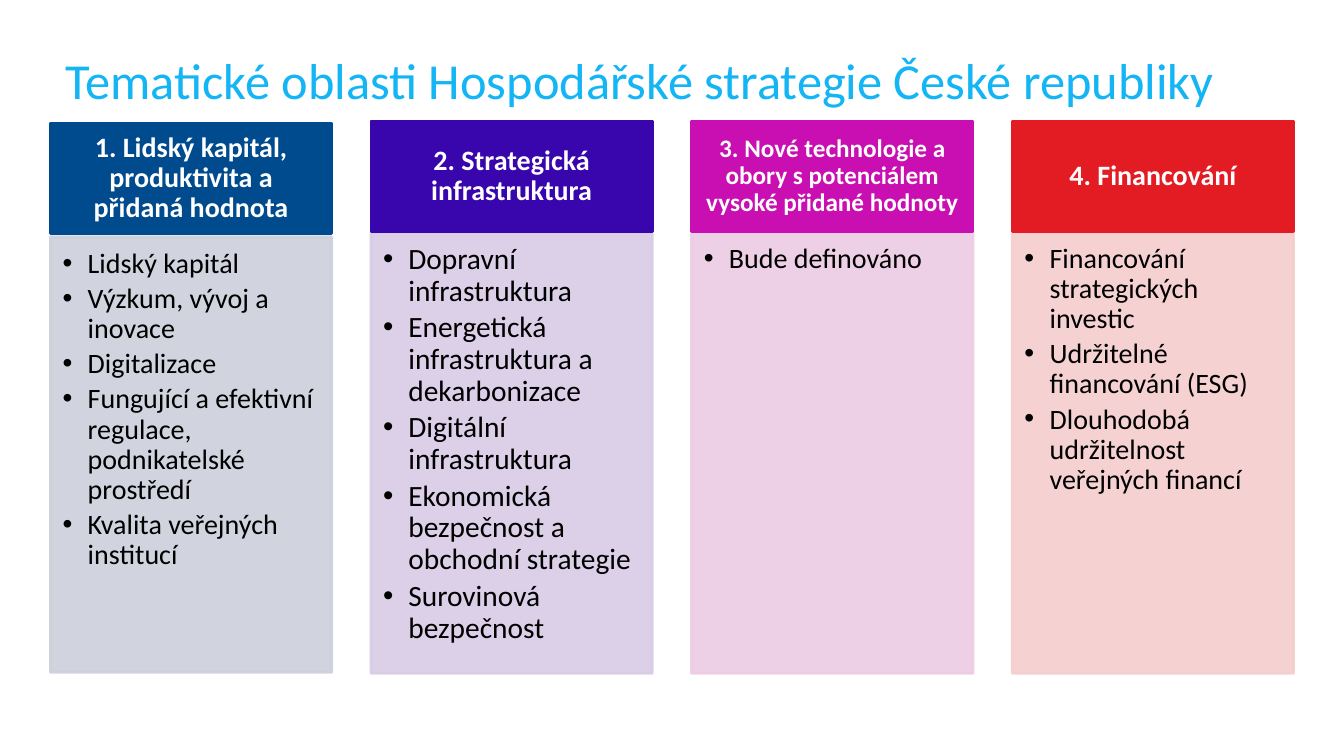
from dataclasses import dataclass
from lxml.etree import SubElement
from pptx import Presentation
from pptx.dml.color import RGBColor
from pptx.enum.shapes import MSO_SHAPE
from pptx.enum.text import MSO_ANCHOR, MSO_AUTO_SIZE, PP_ALIGN
from pptx.oxml.ns import qn
from pptx.util import Inches, Pt


@dataclass
class Theme:
    font: str = "Calibri"
    title: str = "13B5F4"
    white: str = "FFFFFF"
    black: str = "000000"
    big: int = 36
    alpha: int = 90


theme = Theme()


def paint(shape, color, alpha=100):
    """Give a shape one colour for fill and outline."""
    shape.fill.solid()
    shape.line.width = Pt(2)
    for part in (shape.fill.fore_color, shape.line.color):
        part.rgb = RGBColor.from_string(color)
    if alpha < 100:
        for tag in shape.element.spPr.iter(qn("a:srgbClr")):
            SubElement(tag, qn("a:alpha")).set("val", str(alpha * 1000))


def write(para, text, size, color, bold=False):
    """Add one formatted run to a paragraph."""
    run = para.add_run()
    run.text = text
    run.font.name = theme.font
    run.font.size = Pt(size)
    run.font.bold = bold
    run.font.color.rgb = RGBColor.from_string(color)


# Each theme area: heading, size, colour, panel colour, list size, items
areas = [
    ("1. Lidský kapitál, produktivita a přidaná hodnota", 20, "004B8D", "CCD0DB", 20,
     ["Lidský kapitál", "Výzkum, vývoj a inovace", "Digitalizace",
      "Fungující a efektivní regulace, podnikatelské prostředí",
      "Kvalita veřejných institucí"]),
    ("2. Strategická infrastruktura", 20, "3806AC", "D8CBE5", 21,
     ["Dopravní infrastruktura", "Energetická infrastruktura a dekarbonizace",
      "Digitální infrastruktura", "Ekonomická bezpečnost a obchodní strategie",
      "Surovinová bezpečnost"]),
    ("3. Nové technologie a obory s potenciálem vysoké přidané hodnoty", 18,
     "C90FB1", "EDCBE4", 20, ["Bude definováno"]),
    ("4. Financování", 20, "E31B23", "F4CECD", 20,
     ["Financování strategických investic", "Udržitelné financování (ESG)",
      "Dlouhodobá udržitelnost veřejných financí"]),
]

# Slide with a title and four text placeholders
deck = Presentation()
deck.slide_width, deck.slide_height = Inches(13.33), Inches(7.5)
slide = deck.slides.add_slide(deck.slide_layouts[4])
slide.background.fill.solid()
slide.background.fill.fore_color.rgb = RGBColor.from_string(theme.white)

# Title
title = slide.shapes.title
title.left, title.top = Inches(0.65), Inches(0.49)
title.width, title.height = Inches(12.02), Inches(0.61)
frame = title.text_frame
frame.margin_left = frame.margin_right = frame.margin_top = frame.margin_bottom = 0
frame.auto_size = MSO_AUTO_SIZE.NONE
frame.vertical_anchor = MSO_ANCHOR.TOP
frame.paragraphs[0].alignment = PP_ALIGN.LEFT
write(frame.paragraphs[0], "Tematické oblasti Hospodářské strategie České republiky",
      theme.big, theme.title)

# Columns
lists = [item for item in slide.placeholders if item.placeholder_format.idx > 0]
wide, step = 2.79, 3.18
for col, (panel, area) in enumerate(zip(lists, areas)):
    name, size, color, tint, small, items = area
    left = 0.5 + col * step
    # The first column sits slightly lower than the others
    top, start, tall = (1.22, 2.35, 4.32) if col == 0 else (1.2, 2.3, 4.38)

    # Heading
    head = slide.shapes.add_shape(MSO_SHAPE.RECTANGLE, Inches(left), Inches(top),
                                  Inches(wide), Inches(1.1))
    head.shadow.inherit = False
    paint(head, color)
    frame = head.text_frame
    frame.word_wrap = True
    frame.vertical_anchor = MSO_ANCHOR.MIDDLE
    frame.margin_left = frame.margin_right = Inches(size * 0.008)
    frame.margin_top = frame.margin_bottom = Inches(0.09)
    para = frame.paragraphs[0]
    para.alignment = PP_ALIGN.CENTER
    para.line_spacing = 0.9
    write(para, name, size, theme.white, True)

    # Bulleted list
    panel.left, panel.top = Inches(left), Inches(start)
    panel.width, panel.height = Inches(wide), Inches(tall)
    paint(panel, tint, theme.alpha)
    frame = panel.text_frame
    frame.word_wrap = True
    frame.auto_size = MSO_AUTO_SIZE.NONE
    frame.vertical_anchor = MSO_ANCHOR.TOP
    frame.margin_left = frame.margin_top = Inches(0.12)
    frame.margin_right, frame.margin_bottom = Inches(0.16), Inches(0.17)
    for row, item in enumerate(items):
        para = frame.add_paragraph() if row else frame.paragraphs[0]
        para.alignment = PP_ALIGN.LEFT
        para.line_spacing = 0.9
        para.space_before = Pt(0)
        para.space_after = Pt(3.5)
        props = para._p.get_or_add_pPr()
        props.set("marL", str(Inches(0.25)))
        props.set("indent", str(-Inches(0.25)))
        SubElement(props, qn("a:buFont")).set("typeface", "Arial")
        SubElement(props, qn("a:buChar")).set("char", "•")
        write(para, item, small, theme.black)

deck.save("out.pptx")
